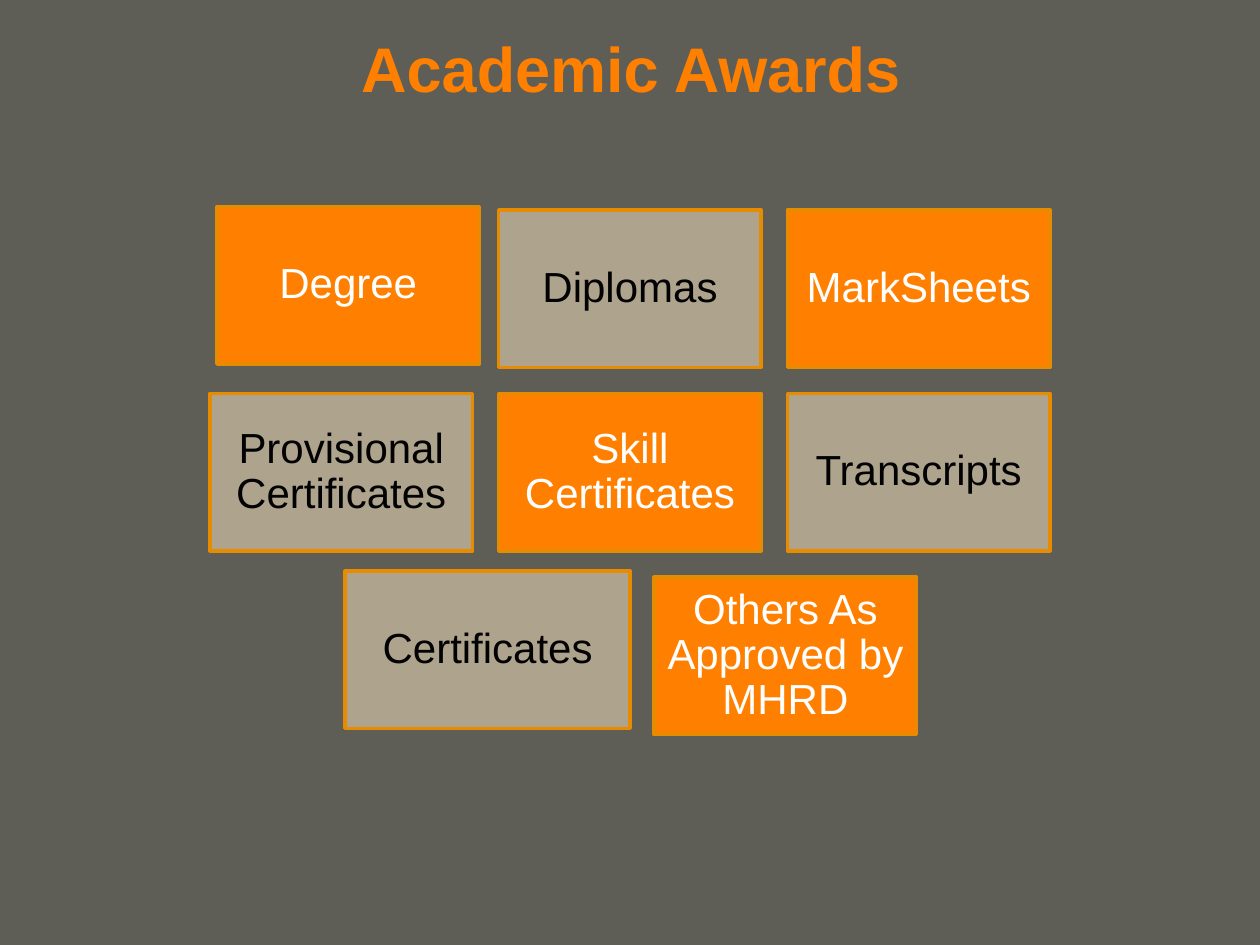
"""Build the Academic Awards slide: a title above eight award cards."""
from pptx import Presentation
from pptx.dml.color import RGBColor
from pptx.enum.shapes import MSO_SHAPE
from pptx.enum.text import MSO_ANCHOR, PP_ALIGN
from pptx.util import Pt

RECTANGLE = MSO_SHAPE.RECTANGLE
MIDDLE = MSO_ANCHOR.MIDDLE
CENTER = PP_ALIGN.CENTER

COLORS = {
    "background": "5E5E56",
    "orange": "FF7F00",
    "tan": "AEA38C",
    "border": "E78B00",
    "white": "FFFFFF",
    "black": "020202",
}
TEXT_COLORS = {"orange": "white", "tan": "black"}
CARD_WIDTH, CARD_HEIGHT = 150, 90
WIDE_CARD_WIDTH = 162.7
COLUMNS = [120, 285, 450]
ROWS = [120, 224.8]


def color(name):
    return RGBColor.from_string(COLORS[name])


def write_centered(shape, text, size, color_name, margin, bold=False):
    frame = shape.text_frame
    frame.word_wrap = True
    frame.vertical_anchor = MIDDLE
    frame.margin_left = frame.margin_right = Pt(7.2)
    frame.margin_top = frame.margin_bottom = Pt(margin)
    paragraph = frame.paragraphs[0]
    paragraph.alignment = CENTER
    run = paragraph.add_run()
    run.text = text
    run.font.name = "Arial"
    run.font.size = Pt(size)
    run.font.bold = bold
    run.font.color.rgb = color(color_name)
    return paragraph


presentation = Presentation()
presentation.slide_width = Pt(720)
presentation.slide_height = Pt(540)
slide = presentation.slides.add_slide(presentation.slide_layouts[6])
slide.background.fill.solid()
slide.background.fill.fore_color.rgb = color("background")

title = slide.shapes.add_textbox(Pt(36.5), Pt(0), Pt(648), Pt(77))
write_centered(title, "Academic Awards", 36, "orange", 3.6, bold=True)

cards = [
    ("Degree", "orange", COLUMNS[0] + 4, ROWS[0] - 2, CARD_WIDTH),
    ("Diplomas", "tan", COLUMNS[1], ROWS[0], CARD_WIDTH),
    ("MarkSheets", "orange", COLUMNS[2], ROWS[0], CARD_WIDTH),
    ("Provisional Certificates", "tan", COLUMNS[0], ROWS[1], CARD_WIDTH),
    ("Skill Certificates", "orange", COLUMNS[1], ROWS[1], CARD_WIDTH),
    ("Transcripts", "tan", COLUMNS[2], ROWS[1], CARD_WIDTH),
    ("Certificates", "tan", 197.3, 326.2, WIDE_CARD_WIDTH),
    ("Others As Approved by MHRD", "orange", 373.8, 329.8, CARD_WIDTH),
]
for label, fill, left, top, width in cards:
    card = slide.shapes.add_shape(RECTANGLE, Pt(left), Pt(top), Pt(width), Pt(CARD_HEIGHT))
    card.shadow.inherit = False
    card.fill.solid()
    card.fill.fore_color.rgb = color(fill)
    card.line.color.rgb = color("border")
    card.line.width = Pt(2)
    paragraph = write_centered(card, label, 24, TEXT_COLORS[fill], 7.2)
    paragraph.line_spacing = 0.9

presentation.save("out.pptx")
